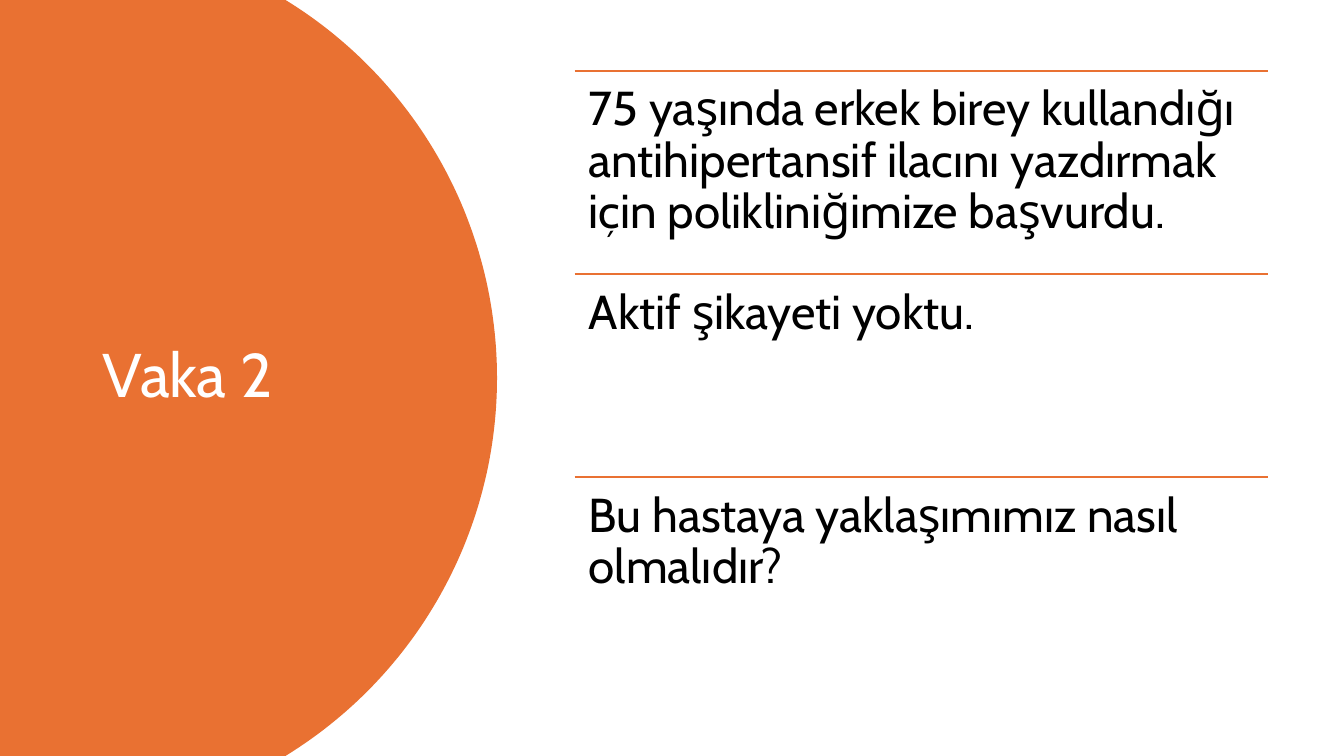
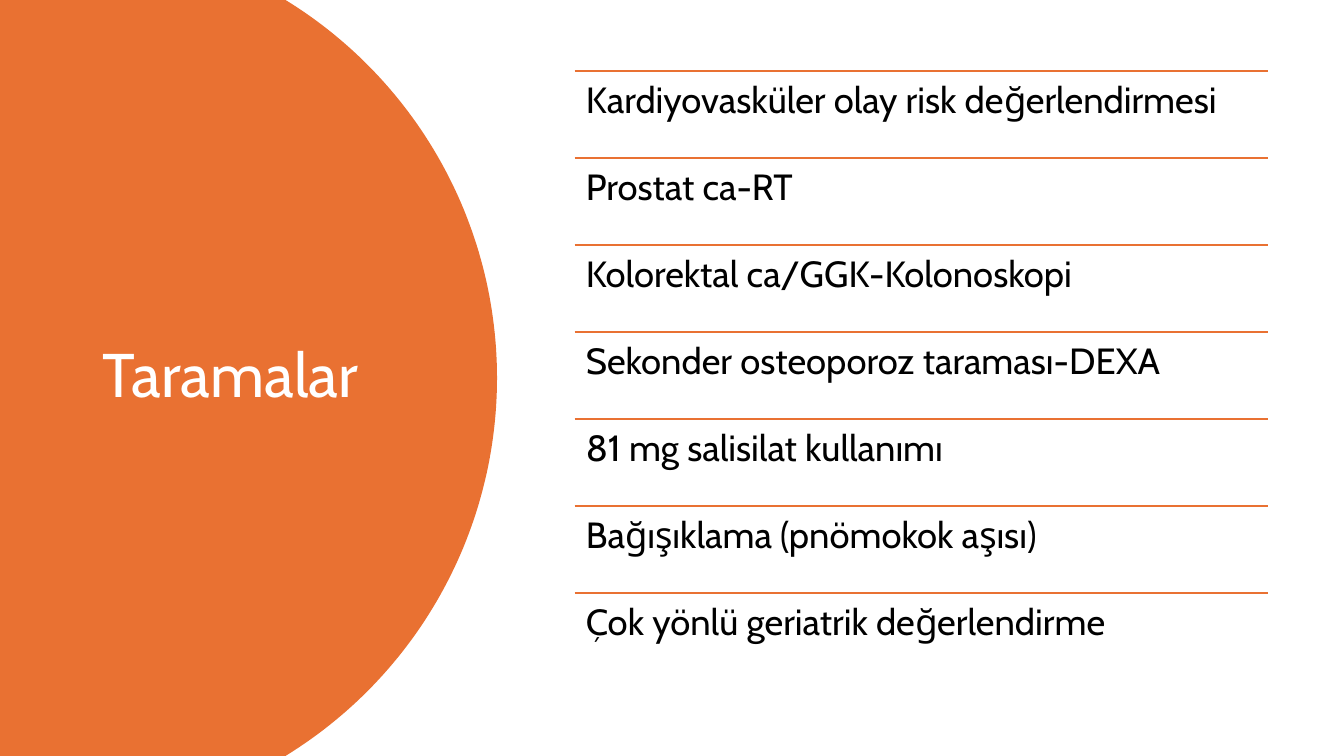
from math import asin, cos, sin

from lxml.etree import SubElement
from pptx import Presentation
from pptx.dml.color import RGBColor
from pptx.enum.shapes import MSO_CONNECTOR
from pptx.enum.text import MSO_ANCHOR, MSO_AUTO_SIZE, PP_ALIGN
from pptx.oxml.ns import qn
from pptx.util import Inches, Pt

SLIDES = [
    {
        "title": "Vaka 2",
        "size": 34,
        "inset": 0.14,
        "rows": [
            "75 yaşında erkek birey kullandığı antihipertansif ilacını yazdırmak için polikliniğimize başvurdu.",
            "Aktif şikayeti yoktu.",
            "Bu hastaya yaklaşımımız nasıl olmalıdır?",
        ],
    },
    {
        "title": "Taramalar",
        "size": 26,
        "inset": 0.11,
        "rows": [
            "Kardiyovasküler olay risk değerlendirmesi",
            "Prostat ca-RT",
            "Kolorektal ca/GGK-Kolonoskopi",
            "Sekonder osteoporoz taraması-DEXA",
            "81 mg salisilat kullanımı",
            "Bağışıklama (pnömokok aşısı)",
            "Çok yönlü geriatrik değerlendirme",
        ],
    },
]

ORANGE = RGBColor(0xE9, 0x71, 0x32)
WHITE = RGBColor(0xFF, 0xFF, 0xFF)
BLACK = RGBColor(0, 0, 0)
FONT = "Cabin"
WIDTH, HEIGHT = 13.33, 7.5
EDGE, RADIUS, STEPS = 4.93, 4.4, 120
LEFT, TOP, SPAN, DEPTH = 5.7, 0.7, 6.88, 6.05
TITLE = {"left": 0.92, "top": 0.7, "width": 3.23, "height": 6.09}


def style(frame, text, size, color, anchor):
    frame.text = text
    look = {
        "word_wrap": True,
        "auto_size": MSO_AUTO_SIZE.NONE,
        "vertical_anchor": anchor,
    }
    for key, value in look.items():
        setattr(frame, key, value)
    para = frame.paragraphs[0]
    para.alignment = PP_ALIGN.LEFT
    para.line_spacing = 0.9
    font = para.runs[0].font
    for key, value in {"name": FONT, "size": Pt(size)}.items():
        setattr(font, key, value)
    font.color.rgb = color


def add_disc(slide):
    half = asin(HEIGHT / 2 / RADIUS)
    turns = [half * (2 * i / STEPS - 1) for i in range(STEPS + 1)]
    arc = [
        (EDGE - RADIUS + RADIUS * cos(turn), HEIGHT / 2 + RADIUS * sin(turn))
        for turn in turns
    ]
    points = [(Inches(x), Inches(y)) for x, y in arc + [(0, HEIGHT)]]
    path = slide.shapes.build_freeform(0, 0)
    path.add_line_segments(points, close=True)
    disc = path.convert_to_shape()
    disc.shadow.inherit = False
    disc.fill.solid()
    disc.fill.fore_color.rgb = ORANGE
    disc.line.fill.background()
    slide.shapes._spTree.insert(2, disc._element)


def add_title(slide, text):
    title = slide.shapes.title
    for key, value in TITLE.items():
        setattr(title, key, Inches(value))
    style(title.text_frame, text, 44, WHITE, MSO_ANCHOR.MIDDLE)


def add_rule(slide, top):
    rule = slide.shapes.add_connector(
        MSO_CONNECTOR.STRAIGHT,
        Inches(LEFT), Inches(top), Inches(LEFT + SPAN), Inches(top),
    )
    rule.line.color.rgb = ORANGE
    rule.line.width = Pt(1.5)
    SubElement(rule._element.spPr, qn("a:effectLst"))


def add_rows(slide, rows, size, inset):
    step = DEPTH / len(rows)
    for i, text in enumerate(rows):
        top = TOP + i * step
        add_rule(slide, top)
        box = slide.shapes.add_textbox(
            Inches(LEFT), Inches(top), Inches(SPAN), Inches(step)
        )
        frame = box.text_frame
        for side in ("left", "top", "right", "bottom"):
            setattr(frame, f"margin_{side}", Inches(inset))
        style(frame, text, size, BLACK, MSO_ANCHOR.TOP)


def main():
    deck = Presentation()
    deck.slide_width = Inches(WIDTH)
    deck.slide_height = Inches(HEIGHT)
    for page in SLIDES:
        slide = deck.slides.add_slide(deck.slide_layouts[5])
        add_disc(slide)
        add_title(slide, page["title"])
        add_rows(slide, page["rows"], page["size"], page["inset"])
    deck.save("out.pptx")


if __name__ == "__main__":
    main()
